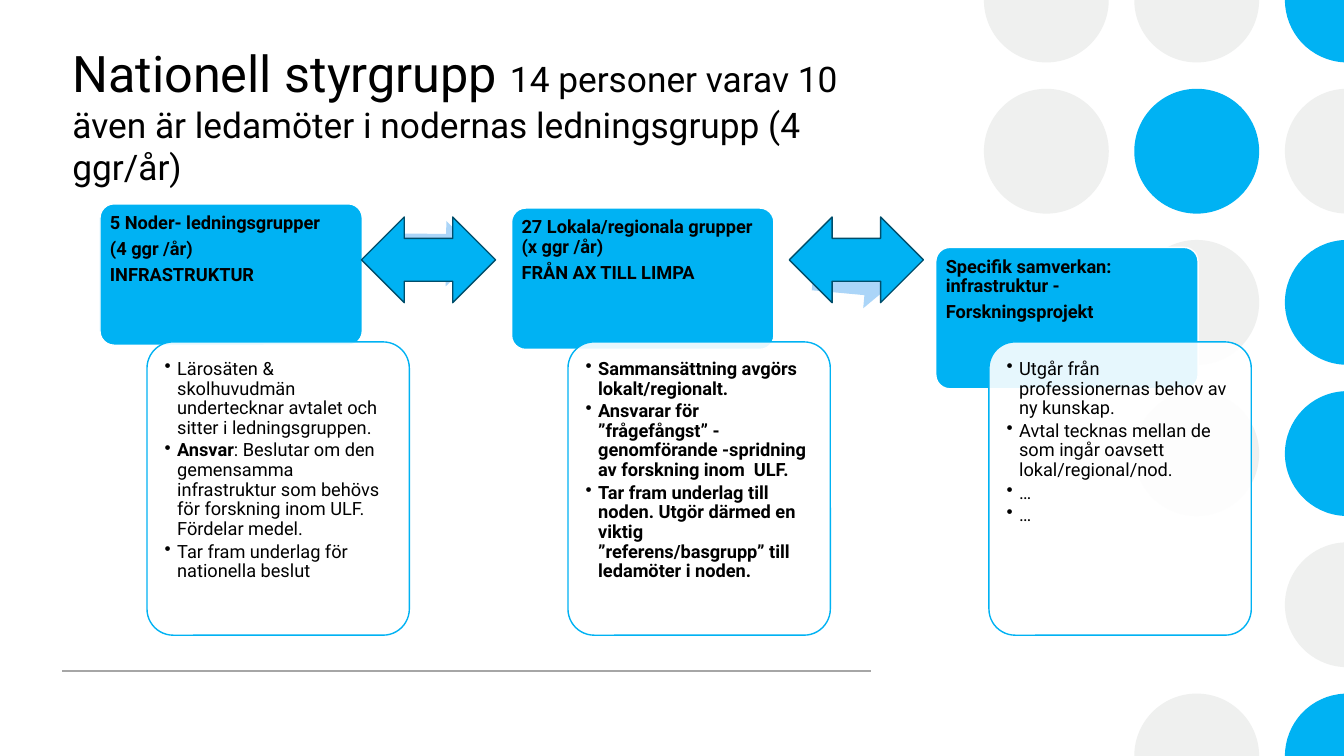
"""Build the slide on the national steering group and its three kinds of groups."""
import math

from lxml import etree
from pptx import Presentation
from pptx import util as u
from pptx.dml.color import RGBColor
from pptx.enum import shapes, text
from pptx.oxml.ns import qn

BLUE, LIGHT_BLUE, DARK_BLUE = "00B2F3", "ABD5F8", "004E6B"
GREY, RULE_GREY, WHITE, BLACK = "EFF0EF", "A6A6A6", "FFFFFF", "000000"


def paint(shape, fill, line=None):
    shape.shadow.inherit = False
    shape.fill.solid()
    shape.fill.fore_color.rgb = RGBColor.from_string(fill)
    if line:
        shape.line.color.rgb = RGBColor.from_string(line)
        shape.line.width = u.Pt(1)
    else:
        shape.line.fill.background()


def write(paragraph, pieces, layout):
    for name, value in layout.items():
        setattr(paragraph, name, value)
    for words, size, bold in pieces:
        run = paragraph.add_run()
        run.text = words
        run.font.color.rgb = RGBColor.from_string(BLACK)
        for name, value in {"name": "Roboto", "size": u.Pt(size), "bold": bold}.items():
            setattr(run.font, name, value)


presentation = Presentation()
presentation.slide_width, presentation.slide_height = u.Pt(960), u.Pt(540)
slide = presentation.slides.add_slide(presentation.slide_layouts[6])

radius, row_step = 44.6, 108
circle_columns = [
    (747.4, {0: GREY, 1: GREY}),
    (854.8, {0: GREY, 1: BLUE, 2: GREY, 3: GREY, 5: GREY}),
    (962.4, {0: BLUE, 1: GREY, 2: BLUE, 3: BLUE, 4: GREY, 5: BLUE}),
]
for center_x, colours in circle_columns:
    at_edge = center_x + radius > 960
    for row, colour in colours.items():
        center_y = row * row_step
        if not at_edge and 0 < row < 5:
            circle = slide.shapes.add_shape(
                shapes.MSO_SHAPE.OVAL, u.Pt(center_x - radius), u.Pt(center_y - radius),
                u.Pt(2 * radius), u.Pt(2 * radius))
            paint(circle, colour)
            continue
        cut = math.acos((960 - center_x) / radius) if at_edge else 0
        start = math.pi if row == 5 else cut
        end = math.pi if row == 0 else 2 * math.pi - cut
        sweep = (end - start) / 2
        reach = 4 / 3 * math.tan(sweep / 4)
        outline = []
        for angle, tangent in [(start, 0), (start, reach), (start + sweep, -reach),
                               (start + sweep, 0), (start + sweep, reach),
                               (end, -reach), (end, 0)]:
            x = center_x + radius * (math.cos(angle) - tangent * math.sin(angle))
            y = center_y + radius * (math.sin(angle) + tangent * math.cos(angle))
            outline.append((u.Pt(x), u.Pt(y)))
        if at_edge and row in (0, 5):
            outline.append((u.Pt(960), u.Pt(center_y)))
        builder = slide.shapes.build_freeform(*outline[0])
        builder.add_line_segments(outline[1:], close=True)
        circle = builder.convert_to_shape()
        segments = list(circle._element.iter(qn("a:lnTo")))
        for first in (0, 3):
            curve = etree.Element(qn("a:cubicBezTo"))
            segments[first].addprevious(curve)
            for segment in segments[first:first + 3]:
                curve.append(segment[0])
                segment.getparent().remove(segment)
        paint(circle, colour)

rule = slide.shapes.add_connector(
    shapes.MSO_CONNECTOR.STRAIGHT, u.Pt(44.6), u.Pt(479.4), u.Pt(622), u.Pt(479.4))
rule.line.color.rgb = RGBColor.from_string(RULE_GREY)
rule.line.width = u.Pt(1)
etree.SubElement(rule._element.spPr, qn("a:effectLst"))

title = slide.shapes.add_textbox(u.Pt(44.6), u.Pt(26), u.Pt(577.4), u.Pt(111.6))
title.text_frame.word_wrap = True
title.text_frame.vertical_anchor = text.MSO_ANCHOR.BOTTOM
write(title.text_frame.paragraphs[0], [
    ("Nationell styrgrupp ", 36, False),
    ("14 personer varav 10 även är ledamöter i nodernas ledningsgrupp (4 ggr/år)", 25.2, False),
], {"alignment": text.PP_ALIGN.LEFT})

groups = [
    {"left": 71.4, "top": 145.6,
     "heading": ["5 Noder- ledningsgrupper", "(4 ggr /år)", "INFRASTRUKTUR"],
     "points": [
         [("Lärosäten & skolhuvudmän undertecknar avtalet och sitter i ledningsgruppen.", False)],
         [("Ansvar", True),
          (": Beslutar om den gemensamma infrastruktur som behövs för forskning inom ULF. "
           "Fördelar medel.", False)],
         [("Tar fram underlag för nationella beslut", False)]],
     "arrow": (285.1, 157.7, 56.9, 0.6)},
    {"left": 365.4, "top": 148.6,
     "heading": ["27 Lokala/regionala grupper (x ggr /år)", "FRÅN AX TILL LIMPA"],
     "points": [
         [("Sammansättning avgörs lokalt/regionalt.", True)],
         [("Ansvarar för ”frågefångst” - genomförande -spridning av forskning inom  ULF.", True)],
         [("Tar fram underlag till noden. Utgör därmed en viktig ”referens/basgrupp” till "
           "ledamöter i noden.", True)]],
     "arrow": (581, 172.8, 61.2, 5.3)},
    {"left": 668.4, "top": 176.7,
     "heading": ["Specifik samverkan: infrastruktur -", "Forskningsprojekt"],
     "points": [
         [("Utgår från professionernas behov av ny kunskap.", False)],
         [("Avtal tecknas mellan de som ingår oavsett lokal/regional/nod.", False)],
         [("…", False)],
         [("…", False)]]},
]
card_width = 187.4
for index, group in enumerate(groups):
    heading = [[(words, True)] for words in group["heading"]]
    cards = [
        (group["left"], group["top"], 101, BLUE, WHITE, 4.2, 4.6, heading),
        (105 + 300.7 * index, 244.2, 209.5, WHITE, BLUE, 7.2, 2, group["points"]),
    ]
    for left, top, height, fill, line, inset, gap, entries in cards:
        card = slide.shapes.add_shape(
            shapes.MSO_SHAPE.ROUNDED_RECTANGLE,
            u.Pt(left), u.Pt(top), u.Pt(card_width), u.Pt(height))
        card.adjustments[0] = 0.1
        paint(card, fill, line)
        frame = card.text_frame
        frame.word_wrap = True
        frame.vertical_anchor = text.MSO_ANCHOR.TOP
        for side in ("left", "top", "right", "bottom"):
            setattr(frame, f"margin_{side}", u.Pt(inset))
        is_list = entries is group["points"]
        if is_list:
            colour = card.fill._xPr.find(qn("a:solidFill"))[0]
            etree.SubElement(colour, qn("a:alpha"), val="90000")
        for number, entry in enumerate(entries):
            paragraph = frame.paragraphs[0] if number == 0 else frame.add_paragraph()
            if is_list:
                properties = paragraph._p.get_or_add_pPr()
                properties.set("marL", str(u.Pt(9)))
                properties.set("indent", str(u.Pt(-9)))
                etree.SubElement(properties, qn("a:buChar"), char="•")
            write(paragraph, [(words, 13, bold) for words, bold in entry],
                  {"alignment": text.PP_ALIGN.LEFT, "line_spacing": 0.9,
                   "space_after": u.Pt(gap)})
    if "arrow" in group:
        left, top, width, angle = group["arrow"]
        arrow = slide.shapes.add_shape(
            shapes.MSO_SHAPE.RIGHT_ARROW, u.Pt(left), u.Pt(top), u.Pt(width), u.Pt(46.8))
        arrow.adjustments[0] = 0.6
        arrow.rotation = angle
        paint(arrow, LIGHT_BLUE)

for left in (258.2, 563.8):
    exchange = slide.shapes.add_shape(
        shapes.MSO_SHAPE.LEFT_RIGHT_ARROW, u.Pt(left), u.Pt(155), u.Pt(95.8), u.Pt(61.2))
    paint(exchange, BLUE, DARK_BLUE)

presentation.save("out.pptx")
